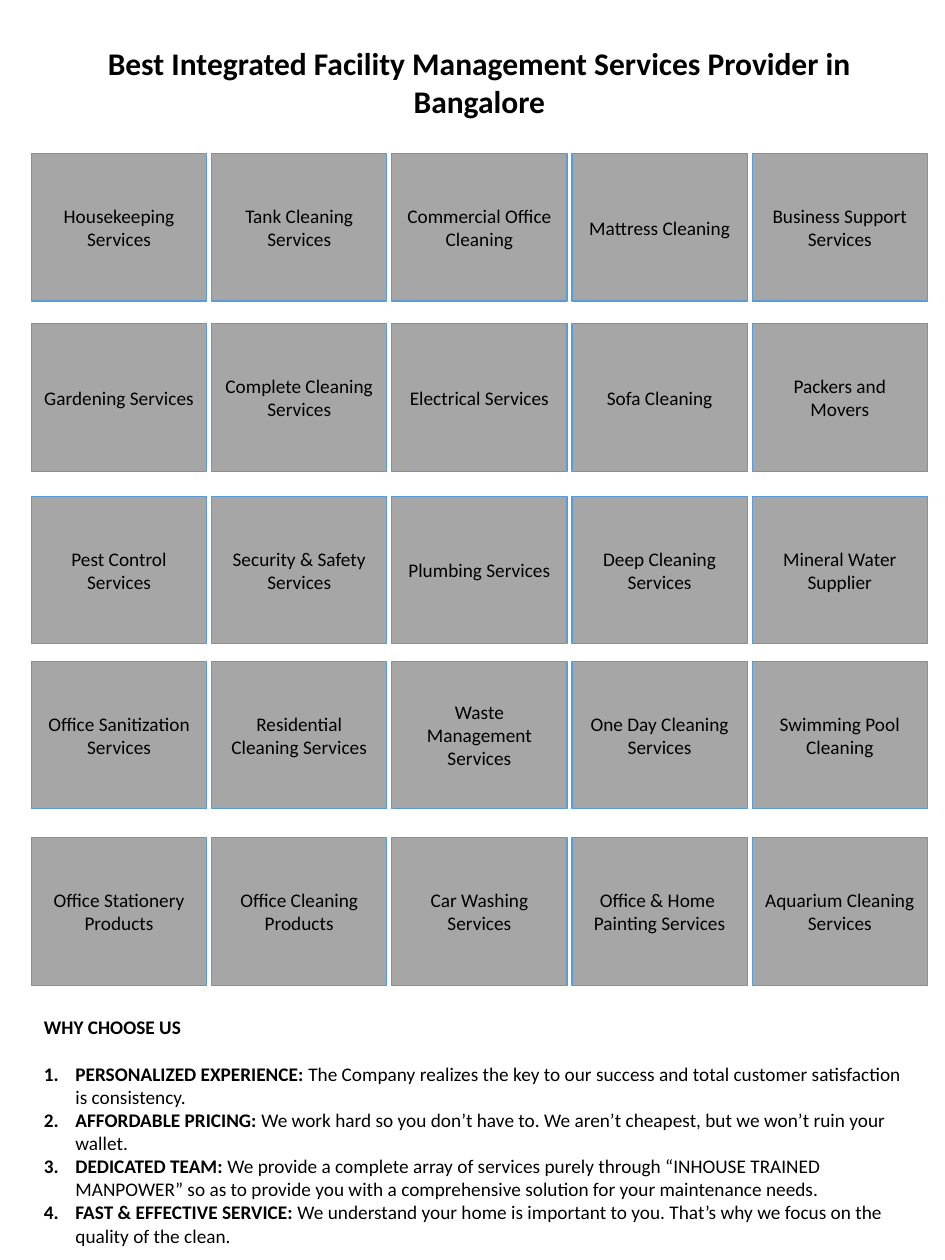
"""Build a one-page overview of facility management services."""
from dataclasses import dataclass

from lxml.etree import SubElement
from pptx import Presentation
from pptx.dml.color import RGBColor
from pptx.enum.shapes import MSO_SHAPE
from pptx.enum.text import MSO_ANCHOR as Anchor, MSO_AUTO_SIZE as AutoSize, PP_ALIGN as Align
from pptx.oxml.ns import qn
from pptx.util import Inches, Pt

COLORS = {"text": "000000", "tile": "A6A6A6", "border": "5B9BD5"}
FONT = "Calibri"
LEFT, CONTENT_WIDTH = 0.25, 7.11
TILE_WIDTH, TILE_HEIGHT, COLUMN_STEP = 1.39, 1.17, 1.43


@dataclass
class ServiceRow:
    top: float
    services: list[str]


@dataclass
class Reason:
    heading: str
    detail: str


SERVICE_ROWS = [
    ServiceRow(1.22, ["Housekeeping Services", "Tank Cleaning Services", "Commercial Office Cleaning",
                      "Mattress Cleaning", "Business Support Services"]),
    ServiceRow(2.57, ["Gardening Services", "Complete Cleaning Services", "Electrical Services",
                      "Sofa Cleaning", "Packers and Movers"]),
    ServiceRow(3.94, ["Pest Control Services", "Security & Safety Services", "Plumbing Services",
                      "Deep Cleaning Services", "Mineral Water Supplier"]),
    ServiceRow(5.25, ["Office Sanitization Services", "Residential Cleaning Services",
                      "Waste Management Services", "One Day Cleaning Services",
                      "Swimming Pool Cleaning"]),
    ServiceRow(6.65, ["Office Stationery Products", "Office Cleaning Products", "Car Washing Services",
                      "Office & Home \nPainting Services", "Aquarium Cleaning Services"]),
]

REASONS = [
    Reason("PERSONALIZED EXPERIENCE: ",
           "The Company realizes the key to our success and total customer satisfaction is consistency."),
    Reason("AFFORDABLE PRICING: ",
           "We work hard so you don’t have to. We aren’t cheapest, but we won’t ruin your wallet."),
    Reason("DEDICATED TEAM: ",
           "We provide a complete array of services purely through “INHOUSE TRAINED MANPOWER” "
           "so as to provide you with a comprehensive solution for your maintenance needs."),
    Reason("FAST & EFFECTIVE SERVICE: ",
           "We understand your home is important to you. That’s why we focus on the quality of the clean."),
]


def color(name: str) -> RGBColor:
    """Return a palette colour."""
    return RGBColor.from_string(COLORS[name])


def format_run(run, size: float = 11, bold: bool = False) -> None:
    """Apply the slide's font to a run."""
    run.font.name = FONT
    run.font.size = Pt(size)
    run.font.bold = bold
    run.font.color.rgb = color("text")


def add_title(slide, text: str) -> None:
    """Place and format the title placeholder."""
    title = slide.shapes.title
    title.left, title.top = Inches(LEFT), Inches(0.3)
    title.width, title.height = Inches(CONTENT_WIDTH), Inches(0.71)
    frame = title.text_frame
    frame.text = text
    frame.word_wrap = True
    frame.auto_size = AutoSize.SHAPE_TO_FIT_TEXT
    frame.vertical_anchor = Anchor.TOP
    paragraph = frame.paragraphs[0]
    paragraph.alignment = Align.CENTER
    format_run(paragraph.runs[0], 18, True)


def add_tile(slide, left: float, top: float, service: str) -> None:
    """Draw one service tile."""
    tile = slide.shapes.add_shape(MSO_SHAPE.RECTANGLE, Inches(left), Inches(top),
                                  Inches(TILE_WIDTH), Inches(TILE_HEIGHT))
    tile.shadow.inherit = False
    tile.fill.solid()
    tile.fill.fore_color.rgb = color("tile")
    tile.line.color.rgb = color("border")
    tile.line.width = Pt(0.75)
    tile.text_frame.word_wrap = True
    tile.text_frame.vertical_anchor = Anchor.MIDDLE
    paragraph = tile.text_frame.paragraphs[0]
    paragraph.text = service
    paragraph.alignment = Align.CENTER
    for run in paragraph.runs:
        format_run(run)


def number_paragraph(paragraph) -> None:
    """Give a paragraph a hanging automatic number."""
    properties = paragraph._p.get_or_add_pPr()
    properties.set("marL", str(Inches(0.25)))
    properties.set("indent", str(Inches(-0.25)))
    SubElement(properties, qn("a:buFont"), typeface="+mj-lt")
    SubElement(properties, qn("a:buAutoNum"), type="arabicPeriod")


def add_reasons(slide, heading: str, reasons: list[Reason]) -> None:
    """Write the heading and the numbered reasons."""
    box = slide.shapes.add_textbox(Inches(LEFT), Inches(8.01), Inches(CONTENT_WIDTH), Inches(1.95))
    frame = box.text_frame
    frame.word_wrap = True
    frame.auto_size = AutoSize.SHAPE_TO_FIT_TEXT
    paragraph = frame.paragraphs[0]
    paragraph.text = heading
    paragraph.space_after = Pt(13.4)
    format_run(paragraph.runs[0], bold=True)
    for reason in reasons:
        paragraph = frame.add_paragraph()
        number_paragraph(paragraph)
        for text, bold in ((reason.heading, True), (reason.detail, False)):
            run = paragraph.add_run()
            run.text = text
            format_run(run, bold=bold)


def main() -> None:
    """Create and save the presentation."""
    presentation = Presentation()
    presentation.slide_width, presentation.slide_height = Inches(7.5), Inches(10)
    slide = presentation.slides.add_slide(presentation.slide_layouts[5])
    add_title(slide, "Best Integrated Facility Management Services Provider in Bangalore")
    for row in SERVICE_ROWS:
        for column, service in enumerate(row.services):
            add_tile(slide, LEFT + column * COLUMN_STEP, row.top, service)
    add_reasons(slide, "WHY CHOOSE US", REASONS)
    presentation.save("out.pptx")


if __name__ == "__main__":
    main()
